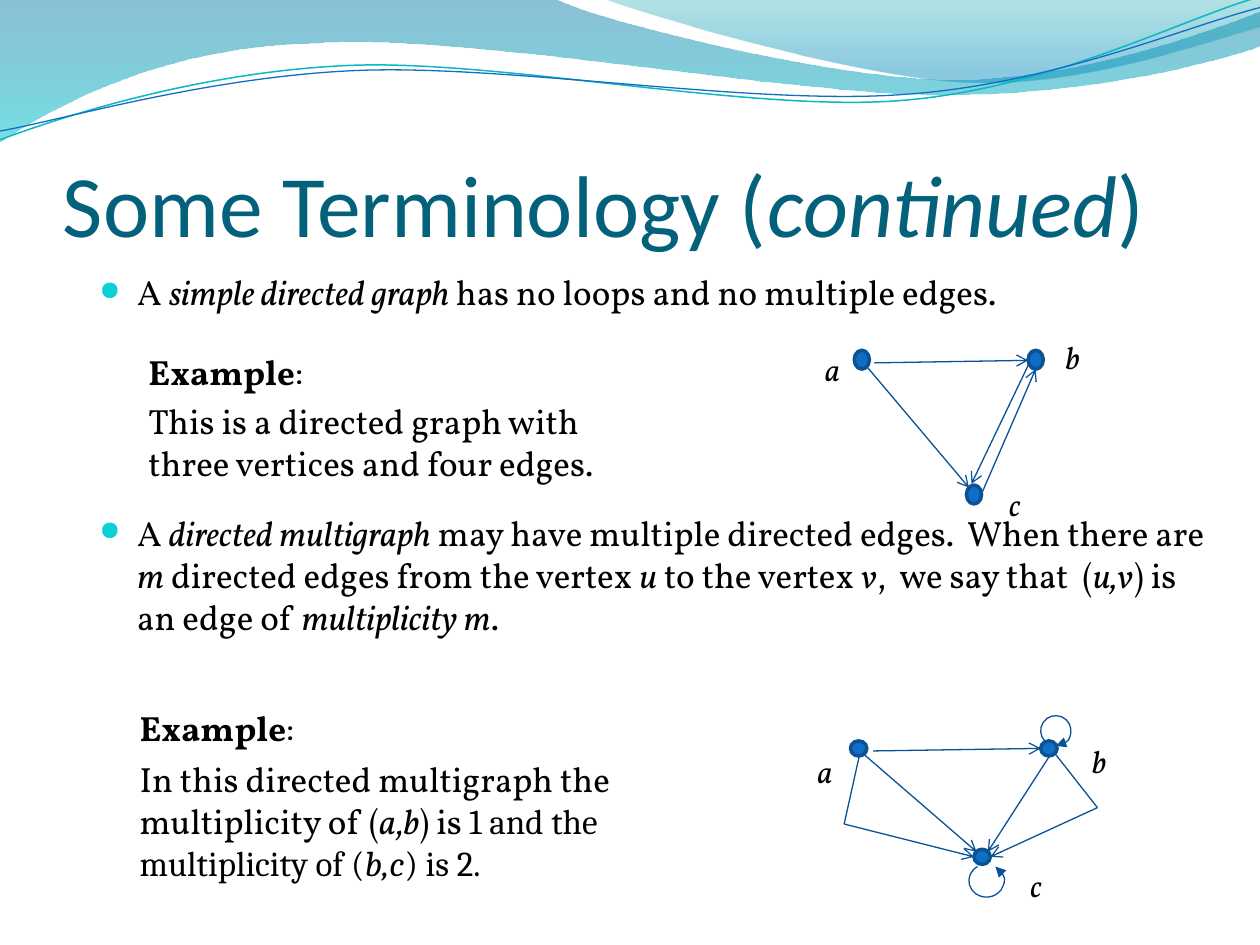
from math import cos, radians, sin, tan

from lxml.etree import SubElement
from pptx import Presentation
from pptx.dml.color import RGBColor
from pptx.enum.shapes import MSO_CONNECTOR, MSO_SHAPE
from pptx.enum.text import MSO_ANCHOR
from pptx.oxml.ns import qn
from pptx.util import Inches, Pt

BLACK = RGBColor(0x00, 0x00, 0x00)
TITLE = RGBColor(0x04, 0x61, 0x7B)
BULLET = RGBColor(0x0B, 0xD0, 0xD9)
NODE = RGBColor(0x0F, 0x6F, 0xC6)
RIM = RGBColor(0x0B, 0x52, 0x92)
EDGE = RGBColor(0x09, 0x52, 0x95)
TEAL = RGBColor(0x0A, 0xB8, 0xBF)
DEEP = RGBColor(0x00, 0x74, 0xA1)
CYAN = RGBColor(0x00, 0xC6, 0xCF)
SEA = RGBColor(0x00, 0xA1, 0xA9)
SKY = RGBColor(0x00, 0x8B, 0xBF)


# Text: *stars* mark italics, a bar switches to Cambria
def add_runs(para, text, size=20, font="Vollkorn", color=BLACK):
    for part, face in zip(text.split("|"), (font, "Cambria")):
        for i, piece in enumerate(part.split("*")):
            if piece:
                run = para.add_run()
                run.text = piece
                style = run.font
                style.name, style.size = face, Pt(size)
                style.italic = i % 2 == 1
                style.color.rgb = color


def add_text(shapes, box, text, *style):
    frame = shapes.add_textbox(*map(Inches, box)).text_frame
    frame.word_wrap = True
    add_runs(frame.paragraphs[0], text, *style)
    return frame


def add_bullet(para):
    props = para._p.get_or_add_pPr()
    props.set("marL", str(Inches(0.3)))
    props.set("indent", str(-Inches(0.3)))
    hue = SubElement(props, qn("a:buClr"))
    SubElement(hue, qn("a:srgbClr"), val=str(BULLET))
    SubElement(props, qn("a:buSzPct"), val="76000")
    SubElement(props, qn("a:buChar"), char="●")


# Outlines: a part of two numbers is a line, one of six a cubic curve
def add_path(shapes, x, y, start, parts, close=False):
    def spot(px, py):
        return Inches(x + px), Inches(y + py)

    build = shapes.build_freeform(*spot(*start))
    for part in parts:
        build.add_line_segments([spot(*part[i:i + 2]) for i in range(0, len(part), 2)],
                                close=False)
    if close:
        build.add_line_segments([], close=True)
    shape = build.convert_to_shape()
    shape.shadow.inherit = False
    legs = list(shape._element.iter(qn("a:lnTo")))
    for part in parts:
        count = len(part) // 2
        group, legs = legs[:count], legs[count:]
        if count == 3:
            group[0].tag = qn("a:cubicBezTo")
            for leg in group[1:]:
                group[0].append(leg[0])
                leg.getparent().remove(leg)
    return shape


def add_band(shapes, x, y, start, parts, stops):
    band = add_path(shapes, x, y, start, parts, close=True)
    band.line.fill.background()
    band.fill.gradient()
    band.fill.gradient_angle = 270
    for stop, (place, color, alpha) in zip(band.fill.gradient_stops, stops):
        stop.position = place
        stop.color.rgb = color
        tint = stop._gs.find(qn("a:srgbClr"))
        SubElement(tint, qn("a:alpha"), val=str(alpha * 1000))


def add_curve(shapes, x, y, start, parts, color, width):
    curve = add_path(shapes, x, y, start, parts)
    curve.fill.background()
    curve.line.color.rgb = color
    curve.line.width = Pt(width)
    return curve


def add_tip(shape, kind):
    SubElement(shape.line._get_or_add_ln(), qn("a:tailEnd"), type=kind)


# Waves across the top
def draw_waves(shapes, x, y):
    add_band(shapes, x, y, (0, 0),
             [(4.4, -0.01), (4.76, 0.17, 6.64, 0.63, 7.58, 0.63),
              (8.53, 0.63, 9.58, 0.26, 10, 0.09), (10.01, 0.36),
              (9.83, 0.44, 8.7, 0.76, 7.46, 0.75), (6.22, 0.75, 3.82, 0.28, 2.57, 0.34),
              (1.29, 0.36, 0.46, 0.83, -0.01, 1.13)],
             [(0, DEEP, 45), (1, CYAN, 55)])
    add_band(shapes, x, y, (4.79, -0.01),
             [(5.09, 0.11, 6.82, 0.62, 7.69, 0.65), (8.56, 0.69, 9.61, 0.32, 10, 0.21),
              (10, 0)],
             [(0, SEA, 30), (0.8, SKY, 45)])
    add_curve(shapes, x, y, (0, 1.11),
              [(0.48, 0.93, 1.58, 0.57, 2.77, 0.52), (3.95, 0.47, 5.93, 0.89, 7.13, 0.8),
               (8.33, 0.71, 9.38, 0.15, 9.98, -0.02)], TEAL, 0.85)
    add_curve(shapes, x, y, (0, 1.04),
              [(0.47, 0.96, 1.64, 0.61, 2.83, 0.56), (4.03, 0.51, 5.97, 0.84, 7.17, 0.75),
               (8.36, 0.67, 9.41, 0.21, 10, 0.06)], NODE, 0.75)


# Title and the two definitions
def draw_title(shapes, box):
    frame = add_text(shapes, box, "Some Terminology (*continued*)", 50, "Calibri", TITLE)
    frame.vertical_anchor = MSO_ANCHOR.BOTTOM
    frame.margin_left = frame.margin_right = frame.margin_bottom = 0


def draw_body(shapes, box):
    frame = add_text(shapes, box,
                     "A *simple directed graph *has no loops and no multiple edges.")
    multi = frame.add_paragraph()
    multi.space_before = Pt(113.5)
    add_runs(multi, "A *directed multigraph* may have multiple directed edges.  "
             "When there are *m* directed edges from the vertex *u* to the vertex *v*,  "
             "we say that  (*u,v*) is an edge of *multiplicity m*.")
    for para in frame.paragraphs:
        add_bullet(para)


def draw_example(shapes, x, y, w, h, gap, text):
    head = add_text(shapes, (x, y, 1.5, 0.44), "Example").paragraphs[0]
    head.runs[0].font.bold = True
    add_runs(head, ":")
    add_text(shapes, (x, y + gap, w, h), text)


# A directed graph: nodes, edges (tip on the last leg), loops and labels
def add_loop(shapes, x, y, rx, ry, start, sweep):
    step = radians(sweep / 4)
    pull = 4 / 3 * tan(step / 4)
    parts = []
    for i in range(4):
        a = radians(start) + i * step
        b = a + step
        parts.append((rx * (cos(a) - pull * sin(a)), ry * (sin(a) + pull * cos(a)),
                      rx * (cos(b) + pull * sin(b)), ry * (sin(b) - pull * cos(b)),
                      rx * cos(b), ry * sin(b)))
    first = rx * cos(radians(start)), ry * sin(radians(start))
    add_tip(add_curve(shapes, x, y, first, parts, EDGE, 0.75), "triangle")


def draw_graph(slide, x, y, size, nodes, edges, labels, loops=()):
    shapes = slide.shapes.add_group_shape().shapes
    for left, top in nodes:
        dot = shapes.add_shape(MSO_SHAPE.OVAL, Inches(x + left), Inches(y + top),
                               *map(Inches, size))
        dot.shadow.inherit = False
        dot.fill.solid()
        dot.fill.fore_color.rgb = NODE
        dot.line.color.rgb = RIM
        dot.line.width = Pt(2)
    for edge in edges:
        for (x1, y1), (x2, y2) in zip(edge, edge[1:]):
            leg = shapes.add_connector(MSO_CONNECTOR.STRAIGHT, Inches(x + x1),
                                       Inches(y + y1), Inches(x + x2), Inches(y + y2))
            leg.line.color.rgb = EDGE
            leg.line.width = Pt(0.75)
            SubElement(leg._element.spPr, qn("a:effectLst"))
        add_tip(leg, "arrow")
    for cx, cy, *ring in loops:
        add_loop(shapes, x + cx, y + cy, *ring)
    for name, (left, top) in zip("abc", labels):
        add_text(shapes, (x + left, y + top, 0.25, 0.25), f"*{name}*", 18)


def main():
    deck = Presentation()
    deck.slide_width, deck.slide_height = Inches(10), Inches(7.5)
    slide = deck.slides.add_slide(deck.slide_layouts[6])
    shapes = slide.shapes
    draw_waves(shapes, 0, 0)
    draw_title(shapes, (0.5, 0.77, 9, 1.25))
    draw_body(shapes, (0.69, 2.1, 9, 4.8))
    draw_graph(slide, 6.45, 2.63, (0.12, 0.15),
               nodes=[(0.33, 0.15), (1.71, 0.15), (1.22, 1.22)],
               edges=[[(0.49, 0.25), (1.71, 0.23)], [(0.43, 0.28), (1.24, 1.24)],
                      [(1.71, 0.27), (1.26, 1.21)], [(1.34, 1.29), (1.77, 0.3)]],
               labels=[(0, 0.1), (1.91, 0), (1.46, 1.17)])
    draw_graph(slide, 6.39, 5.68, (0.13, 0.12),
               nodes=[(0.36, 0.2), (1.87, 0.2), (1.34, 1.06)],
               edges=[[(0.54, 0.28), (1.87, 0.26)], [(0.47, 0.31), (1.36, 1.08)],
                      [(1.94, 0.32), (1.45, 1.08)],
                      [(0.43, 0.32), (0.31, 0.86), (1.34, 1.12)],
                      [(1.99, 0.31), (2.32, 0.73), (1.47, 1.12)]],
               labels=[(0, 0.24), (2.18, 0.16), (1.69, 1.14)],
               loops=[(1.44, 1.31, 0.14, 0.13, 240, -300),
                      (1.99, 0.12, 0.12, 0.12, 135, 315)])
    draw_example(shapes, 1.08, 2.73, 3.84, 0.77, 0.39,
                 "This is a directed graph with three vertices and four edges.")
    draw_example(shapes, 1.01, 5.56, 5.02, 1.11, 0.4,
                 "In this directed multigraph the multiplicity of (*a,b*) is "
                 "|1 and the multiplicity of (*b,c*) is 2.")
    deck.save("out.pptx")


if __name__ == "__main__":
    main()
